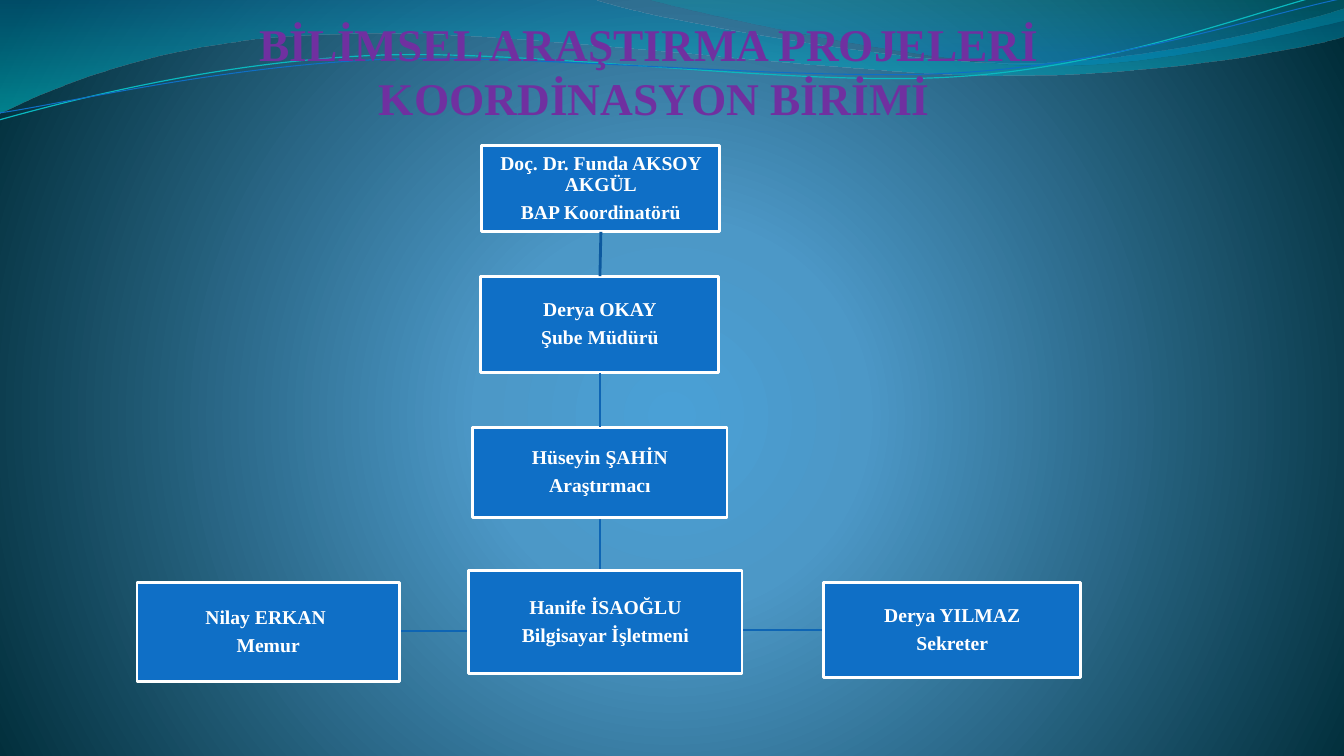
from dataclasses import dataclass

from lxml.etree import SubElement
from pptx import Presentation
from pptx.dml.color import RGBColor
from pptx.enum.shapes import MSO_CONNECTOR, MSO_SHAPE
from pptx.enum.text import MSO_ANCHOR, PP_ALIGN
from pptx.oxml import parse_xml
from pptx.oxml.ns import nsdecls, qn
from pptx.util import Inches, Pt


@dataclass(frozen=True)
class Theme:
    font: str = "Times New Roman"
    title_size: float = 32.4
    title_spacing: float = 38.6
    box_size: float = 14
    box_spacing: float = 4.9
    line_width: float = 2
    title: str = "7030A0"
    box: str = "0F6FC6"
    white: str = "FFFFFF"
    upper_link: str = "0C599F"
    link: str = "0E65B4"
    background: tuple = ((0, "4AA0D6", 100), (25, "4C98C7", 100), (100, "002C38", 100))
    wide_wave: tuple = ((0, "0074A1", 45), (100, "00C6CF", 55))
    right_wave: tuple = ((0, "00A1A9", 30), (80, "008BBF", 45))
    teal_line: str = "0AB8BF"
    blue_line: str = "0F6FC6"


THEME = Theme()
LINEAR = '<a:lin ang="5400000" scaled="1"/>'
RADIAL = ('<a:path path="circle"><a:fillToRect l="10000" t="110000" '
          'r="10000" b="100000"/></a:path>')

WIDE_WAVE = [
    [(0, 0)], [(5.87, -0.01)],
    [(6.34, 0.17), (8.85, 0.63), (10.11, 0.63)],
    [(11.38, 0.63), (12.78, 0.26), (13.33, 0.09)], [(13.35, 0.36)],
    [(13.11, 0.44), (11.6, 0.76), (9.94, 0.75)],
    [(8.29, 0.75), (5.09, 0.28), (3.43, 0.34)],
    [(1.72, 0.36), (0.61, 0.83), (-0.01, 1.13)],
]
RIGHT_WAVE = [
    [(6.39, -0.01)],
    [(6.79, 0.11), (9.09, 0.62), (10.25, 0.65)],
    [(11.41, 0.69), (12.82, 0.32), (13.33, 0.21)], [(13.33, 0)],
]
TEAL_CURVE = [
    [(-0.01, 1.19)],
    [(0.64, 1.01), (2.11, 0.62), (3.69, 0.55)],
    [(5.27, 0.48), (7.9, 0.87), (9.5, 0.76)],
    [(11.1, 0.66), (12.52, 0.08), (13.31, -0.1)],
]
BLUE_CURVE = [
    [(0, 1.12)],
    [(0.63, 1.03), (2.18, 0.66), (3.78, 0.59)],
    [(5.37, 0.53), (7.96, 0.82), (9.55, 0.72)],
    [(11.15, 0.62), (12.55, 0.14), (13.34, -0.02)],
]

STAFF = {
    "coordinator": ((3.42, 0, 2.36, 0.86), "Doç. Dr. Funda AKSOY AKGÜL", "BAP Koordinatörü"),
    "manager": ((3.41, 1.3, 2.36, 0.96), "Derya OKAY", "Şube Müdürü"),
    "researcher": ((3.33, 2.8, 2.52, 0.89), "Hüseyin ŞAHİN", "Araştırmacı"),
    "officer": ((0, 4.34, 2.6, 0.98), "Nilay ERKAN ", "Memur"),
    "secretary": ((6.81, 4.34, 2.55, 0.94), "Derya YILMAZ", "Sekreter"),
    "operator": ((3.29, 4.22, 2.71, 1.02), "Hanife İSAOĞLU", "Bilgisayar İşletmeni"),
}


def color(value):
    return RGBColor.from_string(value)


def gradient(stops, direction):
    items = "".join(
        f'<a:gs pos="{position * 1000}"><a:srgbClr val="{value}">'
        f'<a:alpha val="{alpha * 1000}"/></a:srgbClr></a:gs>'
        for position, value, alpha in stops)
    return (f'<a:gradFill {nsdecls("a")} rotWithShape="1">'
            f'<a:gsLst>{items}</a:gsLst>{direction}</a:gradFill>')


def paint_background(slide):
    background = parse_xml(
        f'<p:bg {nsdecls("p", "a")}><p:bgPr>{gradient(THEME.background, RADIAL)}'
        '<a:effectLst/></p:bgPr></p:bg>')
    slide.element.cSld.insert(0, background)


def style_line(shape, value, width):
    shape.line.color.rgb = color(value)
    shape.line.width = Pt(width)


def add_outline(slide, left, top, segments, close=False):
    segments = [[(Inches(left + x), Inches(top + y)) for x, y in segment]
                for segment in segments]
    anchors = [segment[-1] for segment in segments]
    builder = slide.shapes.build_freeform(*anchors[0], scale=1)
    builder.add_line_segments(anchors[1:], close=close)
    shape = builder.convert_to_shape()
    shape.shadow.inherit = False
    shape.fill.background()
    lines = list(shape.element.iter(qn("a:lnTo")))
    for line, segment in zip(lines, segments[1:]):
        if len(segment) == 3:
            points = "".join(f'<a:pt x="{x - shape.left}" y="{y - shape.top}"/>'
                             for x, y in segment)
            curve = parse_xml(f'<a:cubicBezTo {nsdecls("a")}>{points}</a:cubicBezTo>')
            line.getparent().replace(line, curve)
    return shape


def add_waves(slide, left, top):
    for segments, stops in ((WIDE_WAVE, THEME.wide_wave), (RIGHT_WAVE, THEME.right_wave)):
        wave = add_outline(slide, left, top, segments, close=True)
        wave.line.fill.background()
        properties = wave.element.spPr
        properties.replace(properties.find(qn("a:noFill")),
                           parse_xml(gradient(stops, LINEAR)))
    for segments, value, width in ((TEAL_CURVE, THEME.teal_line, 0.85),
                                   (BLUE_CURVE, THEME.blue_line, 0.75)):
        style_line(add_outline(slide, left, top, segments), value, width)


def format_text(text_frame, size, value, margin):
    text_frame.word_wrap = True
    text_frame.vertical_anchor = MSO_ANCHOR.MIDDLE
    text_frame.margin_left = text_frame.margin_right = Inches(margin)
    text_frame.margin_top = text_frame.margin_bottom = Inches(margin)
    for paragraph in text_frame.paragraphs:
        paragraph.alignment = PP_ALIGN.CENTER
        for run in paragraph.runs:
            run.font.name = THEME.font
            run.font.size = Pt(size)
            run.font.bold = True
            run.font.color.rgb = color(value)


def add_title(slide, left, top, width, height):
    title = slide.shapes.add_textbox(
        Inches(left), Inches(top), Inches(width), Inches(height))
    text_frame = title.text_frame
    text_frame.text = "BİLİMSEL ARAŞTIRMA PROJELERİ\v KOORDİNASYON BİRİMİ"
    format_text(text_frame, THEME.title_size, THEME.title, 0)
    text_frame.paragraphs[0].line_spacing = Pt(THEME.title_spacing)


def add_person(slide, left, top, role):
    (x, y, width, height), name, position = STAFF[role]
    box = slide.shapes.add_shape(
        MSO_SHAPE.RECTANGLE, Inches(left + x), Inches(top + y),
        Inches(width), Inches(height))
    box.shadow.inherit = False
    box.fill.solid()
    box.fill.fore_color.rgb = color(THEME.box)
    style_line(box, THEME.white, THEME.line_width)
    box.text_frame.text = f"{name}\n{position}"
    format_text(box.text_frame, THEME.box_size, THEME.white, 0.01)
    for paragraph in box.text_frame.paragraphs:
        paragraph.line_spacing = 0.9
        paragraph.space_after = Pt(THEME.box_spacing)
    return box


def add_link(slide, upper, lower, value):
    link = slide.shapes.add_connector(MSO_CONNECTOR.STRAIGHT, 0, 0, 0, 0)
    link.begin_connect(upper, 2)
    link.end_connect(lower, 0)
    style_line(link, value, THEME.line_width)
    SubElement(link.element.spPr, qn("a:effectLst"))


def add_staff_chart(slide, left, top):
    for end, bottom in ((6.81, 4.81), (2.6, 4.82)):
        corner = [[(4.59, 3.69)], [(4.59, bottom)], [(end, bottom)]]
        style_line(add_outline(slide, left, top, corner), THEME.link, THEME.line_width)
    boxes = {role: add_person(slide, left, top, role) for role in STAFF}
    add_link(slide, boxes["coordinator"], boxes["manager"], THEME.upper_link)
    add_link(slide, boxes["manager"], boxes["researcher"], THEME.link)


def main():
    presentation = Presentation()
    presentation.slide_width = Inches(13.33)
    presentation.slide_height = Inches(7.5)
    slide = presentation.slides.add_slide(presentation.slide_layouts[6])
    paint_background(slide)
    add_waves(slide, 0, 0)
    add_title(slide, 0.77, 0.17, 11.33, 1.07)
    add_staff_chart(slide, 1.36, 1.44)
    presentation.save("out.pptx")


if __name__ == "__main__":
    main()
